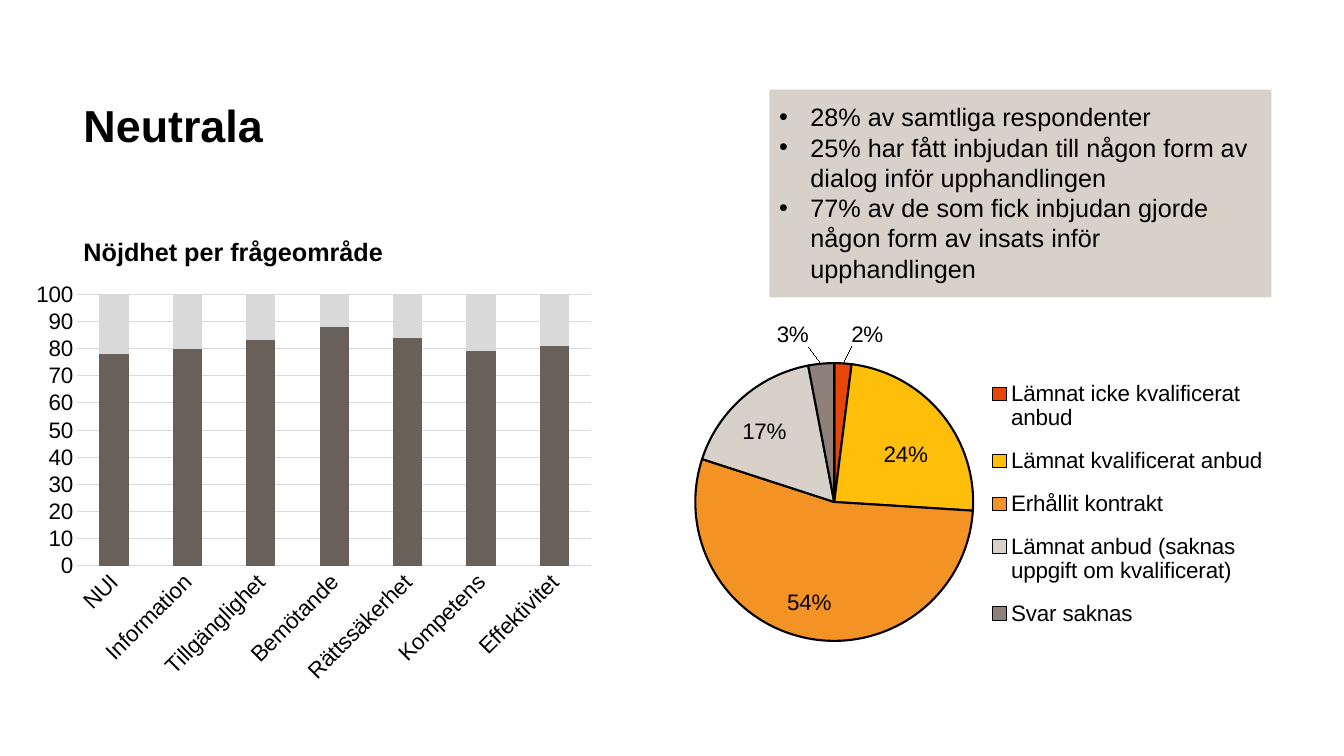
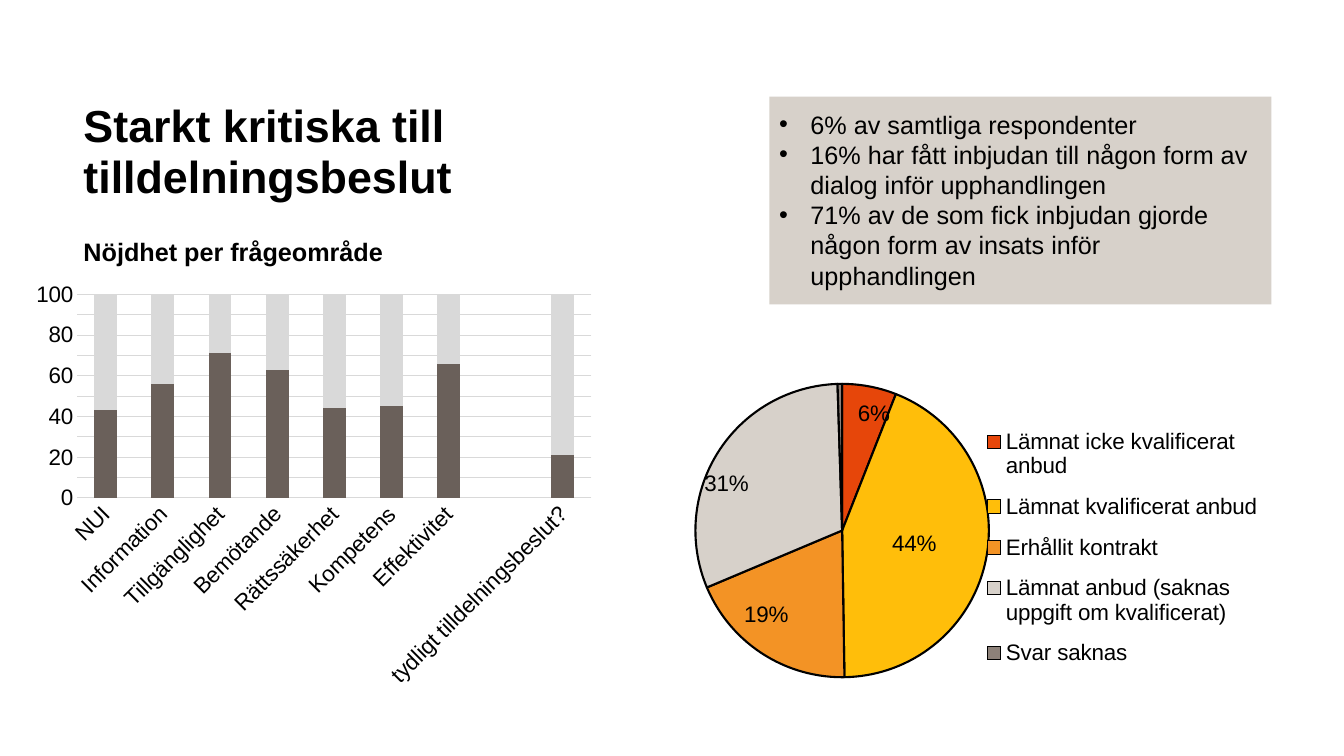
from lxml import etree
from pptx import Presentation
from pptx.chart.data import CategoryChartData
from pptx.dml.color import RGBColor
from pptx.enum import chart as ch, shapes, text
from pptx.oxml import parse_xml
from pptx.oxml.ns import nsdecls, qn
from pptx.util import Inches, Pt

FONT = "Arial"
BLACK = RGBColor(0x00, 0x00, 0x00)
BROWN = RGBColor(0x6A, 0x60, 0x5A)
PALE = RGBColor(0xD9, 0xD9, 0xD9)
SAND = RGBColor(0xD7, 0xD1, 0xCA)
RED = RGBColor(0xE6, 0x46, 0x0A)
YELLOW = RGBColor(0xFF, 0xBE, 0x0A)
ORANGE = RGBColor(0xF3, 0x93, 0x25)
TAUPE = RGBColor(0x8D, 0x81, 0x79)

AREAS = ["NUI", "Information", "Tillgänglighet", "Bemötande",
         "Rättssäkerhet", "Kompetens", "Effektivitet"]
BIDS = {
    "Lämnat icke kvalificerat anbud": RED,
    "Lämnat kvalificerat anbud": YELLOW,
    "Erhållit kontrakt": ORANGE,
    "Lämnat anbud (saknas uppgift om kvalificerat)": SAND,
    "Svar saknas": TAUPE,
}
MID = ch.XL_LABEL_POSITION.CENTER
OUT = ch.XL_LABEL_POSITION.OUTSIDE_END

# Labels hold a position and a shift as shares of the chart's size.
GROUPS = [
    {
        "title": "Neutrala",
        "facts": ["28% av samtliga respondenter",
                  "25% har fått inbjudan till någon form av dialog inför "
                  "upphandlingen",
                  "77% av de som fick inbjudan gjorde någon form av insats "
                  "inför upphandlingen"],
        "top": 0.89,
        "areas": AREAS,
        "scores": [78, 80, 83, 88, 84, 79, 81],
        "height": 0.64,
        "shares": [0.02, 0.24, 0.54, 0.17, 0.03],
        "labels": [(OUT, 0.04, -0.03), (MID, 0.03, -0.01),
                   (MID, -0.02, 0.09), (MID, -0.04, -0.05),
                   (OUT, -0.02, -0.03)],
        "box": (6.67, 3.03, 5.94, 3.58),
        "plot": (0.02, 0.16, 0.5, 0.77),
        "legend": (0.52, 0.16, 0.48, 0.78),
    },
    {
        "title": "Starkt kritiska till tilldelningsbeslut",
        "facts": ["6% av samtliga respondenter",
                  "16% har fått inbjudan till någon form av dialog inför "
                  "upphandlingen",
                  "71% av de som fick inbjudan gjorde någon form av insats "
                  "inför upphandlingen"],
        "top": 0.96,
        "areas": AREAS + ["", "tydligt tilldelningsbeslut?"],
        "scores": [43, 56, 71, 63, 44, 45, 66, None, 21],
        "height": 0.48,
        "shares": [0.06, 0.44, 0.19, 0.31, 0.005],
        "labels": [(MID, 0.03, -0.12), (MID, 0, 0),
                   (MID, -0.06, 0.06), (MID, -0.09, -0.02)],
        "box": (6.66, 3.1, 5.94, 3.7),
        "plot": (0.04, 0.19, 0.49, 0.79),
        "legend": (0.54, 0.27, 0.46, 0.72),
    },
]


def style(font, size, bold=False):
    font.name, font.size, font.bold = FONT, Pt(size), bold
    font.color.rgb = BLACK


def layout(x, y, w=None, h=None, inner=False):
    """Make a manual chart layout; without a size it is a shift."""
    root = parse_xml(f"<c:layout {nsdecls('c')}><c:manualLayout/></c:layout>")
    parts = [("layoutTarget", "inner")] if inner else []
    if w is not None:
        parts += [("xMode", "edge"), ("yMode", "edge")]
    parts += [("x", x), ("y", y)]
    if w is not None:
        parts += [("w", w), ("h", h)]
    for tag, val in parts:
        etree.SubElement(root[0], qn(f"c:{tag}")).set("val", str(val))
    return root


def set_plot(chart, box):
    area = chart._chartSpace.chart.plotArea
    for old in area.findall(qn("c:layout")):
        area.remove(old)
    area.insert(0, layout(*box, inner=True))


def add_chart(slide, kind, box, data):
    frame = slide.shapes.add_chart(kind, *map(Inches, box), data)
    chart = frame.chart
    chart.has_title = False
    chart.has_legend = False
    style(chart.font, 16)
    return chart


def add_text(slide, box, words, size, gap=1):
    frame = slide.shapes.add_textbox(*map(Inches, box)).text_frame
    frame.word_wrap = True
    para = frame.paragraphs[0]
    para.text = words
    para.line_spacing = gap
    style(para.font, size, True)


def add_facts(slide, box, facts):
    panel = slide.shapes.add_shape(shapes.MSO_SHAPE.RECTANGLE,
                                   *map(Inches, box))
    panel.shadow.inherit = False
    panel.fill.solid()
    panel.fill.fore_color.rgb = SAND
    panel.line.fill.background()
    frame = panel.text_frame
    frame.word_wrap = True
    frame.vertical_anchor = text.MSO_ANCHOR.TOP
    frame.margin_left = frame.margin_right = Inches(0.1)
    frame.margin_top = frame.margin_bottom = Inches(0.12)
    for i, fact in enumerate(facts):
        para = frame.add_paragraph() if i else frame.paragraphs[0]
        para.text = fact
        para.alignment = text.PP_ALIGN.LEFT
        props = para._p.get_or_add_pPr()
        props.set("marL", str(Inches(0.31)))
        props.set("indent", str(-Inches(0.31)))
        etree.SubElement(props, qn("a:buFont")).set("typeface", FONT)
        etree.SubElement(props, qn("a:buChar")).set("char", "•")
        style(para.font, 18)


def add_bars(slide, box, areas, scores, height):
    """Stack each score with its rest up to 100."""
    data = CategoryChartData()
    data.categories = areas
    data.add_series("Series 1", scores)
    data.add_series("Series 2", [None if s is None else 100 - s
                                 for s in scores])
    chart = add_chart(slide, ch.XL_CHART_TYPE.COLUMN_STACKED, box, data)
    set_plot(chart, (0.09, 0.05, 0.89, height))
    plot = chart.plots[0]
    plot.gap_width, plot.overlap = 150, 100
    plot.vary_by_categories = False
    for series, color in zip(plot.series, (BROWN, PALE)):
        series.format.fill.solid()
        series.format.fill.fore_color.rgb = color
    cats, vals = chart.category_axis, chart.value_axis
    for axis in (cats, vals):
        axis.major_tick_mark = axis.minor_tick_mark = ch.XL_TICK_MARK.NONE
        style(axis.tick_labels.font, 16)
    vals.minimum_scale, vals.maximum_scale, vals.major_unit = 0, 100, 10
    vals.tick_labels.number_format = "0"
    vals.tick_labels.number_format_is_linked = False
    vals.format.line.fill.background()
    for line in (cats.format.line, vals.major_gridlines.format.line):
        line.color.rgb = PALE
        line.width = Pt(0.75)
    turn = cats._element.find(qn("c:txPr")).find(qn("a:bodyPr"))
    turn.set("rot", "-2700000")
    turn.set("vert", "horz")


def add_pie(slide, box, shares, labels, area, key):
    data = CategoryChartData(number_format="0%")
    data.categories = list(BIDS)
    data.add_series("Series 1", shares)
    chart = add_chart(slide, ch.XL_CHART_TYPE.PIE, box, data)
    set_plot(chart, area)
    chart.has_legend = True
    legend = chart.legend
    legend.position = ch.XL_LEGEND_POSITION.RIGHT
    legend.include_in_layout = False
    style(legend.font, 16)
    for old in legend._element.findall(qn("c:layout")):
        legend._element.remove(old)
    legend._element.find(qn("c:legendPos")).addnext(layout(*key))
    series = chart.plots[0].series[0]
    for i, color in enumerate(BIDS.values()):
        look = series.points[i].format
        look.fill.solid()
        look.fill.fore_color.rgb = color
        look.line.color.rgb = BLACK
        look.line.width = Pt(1.5)
    series.data_labels.show_value = False
    for i, (place, dx, dy) in enumerate(labels):
        label = series.points[i].data_label
        style(label.font, 16)
        label.position = place
        mark = series.data_labels._element.findall(qn("c:dLbl"))[i]
        mark.insert(1, layout(dx, dy))


def add_group(deck, group):
    slide = deck.slides.add_slide(deck.slide_layouts[6])
    add_text(slide, (0.73, 0.96, 5.94, 1.35), group["title"], 32, 0.95)
    add_facts(slide, (7.63, group["top"], 4.98, 2.06), group["facts"])
    add_text(slide, (0.73, 2.3, 3.5, 0.4), "Nöjdhet per frågeområde", 18)
    add_bars(slide, (0.25, 2.71, 5.73, 4.21), group["areas"],
             group["scores"], group["height"])
    add_pie(slide, group["box"], group["shares"], group["labels"],
            group["plot"], group["legend"])


def main():
    deck = Presentation()
    deck.slide_width, deck.slide_height = Inches(13.33), Inches(7.5)
    for group in GROUPS:
        add_group(deck, group)
    deck.save("out.pptx")


if __name__ == "__main__":
    main()
